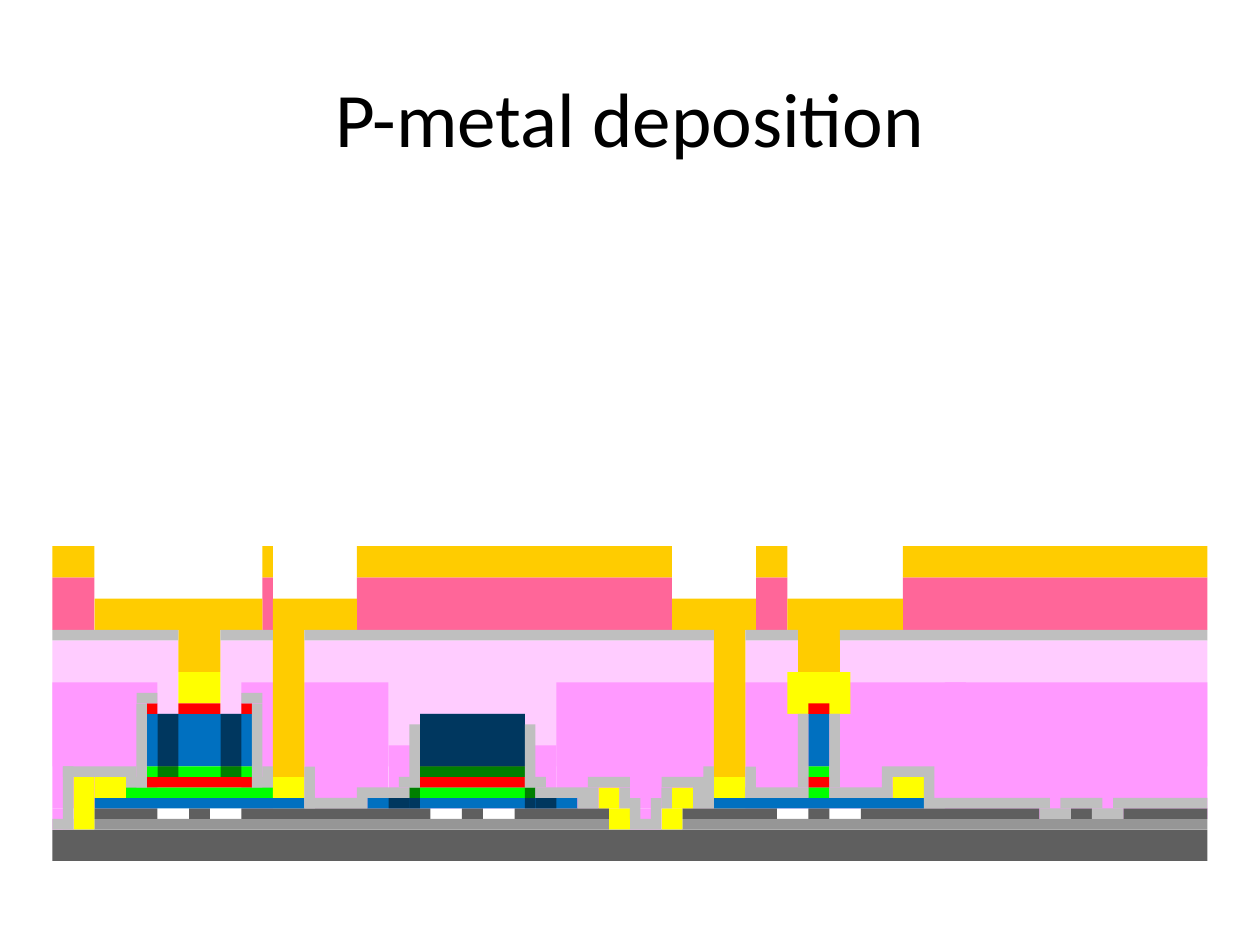
from lxml import etree
from pptx import Presentation
from pptx.dml.color import RGBColor
from pptx.enum.shapes import MSO_SHAPE
from pptx.enum.text import MSO_ANCHOR, PP_ALIGN
from pptx.oxml.ns import qn
from pptx.util import Inches, Pt

RECTANGLE = MSO_SHAPE.RECTANGLE
CENTER = PP_ALIGN.CENTER
MIDDLE = MSO_ANCHOR.MIDDLE

CELL = Inches(1) / 12
LEFT_CELLS, TOP_CELLS = 5, 52

SILICON, OXIDE = "5F5F5F", "969696"
N_LAYER, QUANTUM_WELL, CLADDING = "0070C0", "00FF00", "FF0000"
CONTACT, P_METAL = "FFFF00", "FFCC00"
LOWER_FILL, UPPER_FILL, RESIST = "FF99FF", "FFCCFF", "FF6699"
PASSIVATION, IMPLANT = "BFBFBF", "000000"

RESIST_SPANS = [(0, 4), (20, 1), (29, 30), (67, 3), (81, 29)]
FILL_SPANS = [(0, 12), (16, 5), (24, 39), (66, 5), (75, 35)]
MESA_SPANS = [(9, 10), (35, 10), (72, 2)]

# Each layer: colour, top row, rows high, [(first column, columns wide)]
LAYERS = [
    (UPPER_FILL, 9, 12, FILL_SPANS),
    (LOWER_FILL, 13, 12, [(0, 10), (18, 3), (24, 8), (48, 15), (66, 21)]),
    (LOWER_FILL, 13, 13, [(85, 25)]),
    (LOWER_FILL, 19, 6, [(32, 16)]),
    (CONTACT, 12, 4, [(70, 6)]),
    (LOWER_FILL, 16, 8, [(69, 9)]),
    (OXIDE, 26, 1, [(4, 49), (60, 50)]),
    (SILICON, 27, 3, [(0, 110)]),
    (SILICON, 25, 1, [(4, 6), (13, 2), (18, 18), (39, 2), (44, 9),
                      (60, 9), (72, 2), (77, 17), (97, 2), (102, 8)]),
    (N_LAYER, 16, 5, MESA_SPANS),
    (N_LAYER, 24, 1, [(4, 20), (30, 20), (63, 20)]),
    (QUANTUM_WELL, 23, 1, [(7, 14), (34, 12), (72, 2)]),
    (CLADDING, 22, 1, MESA_SPANS),
    (QUANTUM_WELL, 21, 1, MESA_SPANS),
    (CONTACT, 22, 2, [(4, 3), (21, 3), (63, 3), (80, 3)]),
    (CONTACT, 23, 2, [(52, 2), (59, 2)]),
    (CONTACT, 25, 2, [(53, 2), (58, 2)]),
    (CONTACT, 22, 5, [(2, 2)]),
    (CONTACT, 12, 3, [(12, 4)]),
    (LOWER_FILL, 25, 2, [(0, 2), (55, 3)]),
    (CLADDING, 15, 1, [(9, 1), (12, 4), (18, 1), (72, 2)]),
]

IMPLANTS = [
    (IMPLANT, 16, 6, [(10, 2), (16, 2), (35, 10)]),
    (IMPLANT, 23, 2, [(34, 1), (45, 1)]),
    (IMPLANT, 24, 1, [(32, 2), (46, 2)]),
]

METALLIZATION = [
    (RESIST, 3, 5, RESIST_SPANS),
    (P_METAL, 5, 3, [(4, 16), (21, 8), (59, 8), (70, 11)]),
    (P_METAL, 8, 14, [(21, 3), (63, 3)]),
    (P_METAL, 0, 3, RESIST_SPANS),
    (P_METAL, 8, 4, [(12, 4), (71, 4)]),
    (PASSIVATION, 8, 1, FILL_SPANS),
]

SIDEWALLS = [
    (PASSIVATION, 14, 1, [(8, 2), (18, 2)]),
    (PASSIVATION, 15, 8, [(8, 1), (19, 1)]),
    (PASSIVATION, 16, 7, [(71, 1), (74, 1)]),
    (PASSIVATION, 17, 6, [(34, 1), (45, 1)]),
    (PASSIVATION, 21, 1, [(1, 7), (20, 1), (62, 1), (79, 5)]),
    (PASSIVATION, 21, 3, [(66, 1)]),
    (PASSIVATION, 21, 4, [(24, 1)]),
    (PASSIVATION, 21, 6, [(1, 1)]),
    (PASSIVATION, 22, 1, [(7, 2), (19, 2), (33, 2), (45, 2), (51, 4), (58, 3)]),
    (PASSIVATION, 22, 2, [(79, 1), (83, 1)]),
    (PASSIVATION, 22, 3, [(61, 2)]),
    (PASSIVATION, 23, 1, [(29, 5), (46, 6), (66, 6), (74, 6)]),
    (PASSIVATION, 23, 2, [(54, 1), (58, 1)]),
    (PASSIVATION, 24, 1, [(24, 6), (50, 2), (83, 12), (96, 4), (101, 9)]),
    (PASSIVATION, 24, 2, [(55, 1), (57, 1)]),
    (PASSIVATION, 25, 1, [(94, 3), (99, 3)]),
    (PASSIVATION, 26, 1, [(0, 2), (55, 3)]),
]


def paint(fill, colour, opacity):
    fill.solid()
    fill.fore_color.rgb = RGBColor.from_string(colour)
    if opacity < 100:
        tint = fill._xPr.find(qn("a:solidFill"))[0]
        etree.SubElement(tint, qn("a:alpha")).set("val", str(opacity * 1000))


def add_block(shapes, colour, column, row, columns, rows, opacity):
    block = shapes.add_shape(
        RECTANGLE,
        round((LEFT_CELLS + column) * CELL), round((TOP_CELLS + row) * CELL),
        round(columns * CELL), round(rows * CELL))
    paint(block.fill, colour, opacity)
    block.line.fill.background()
    block.shadow.inherit = False


def add_layers(shapes, layers, opacity=100):
    for colour, row, rows, spans in layers:
        for column, columns in spans:
            add_block(shapes, colour, column, row, columns, rows, opacity)


def set_title(slide, wording):
    title = slide.shapes.title
    title.left, title.top = Inches(0.5), Inches(0.3)
    title.width, title.height = Inches(9), Inches(1.25)
    title.text_frame.text = wording
    title.text_frame.vertical_anchor = MIDDLE
    heading = title.text_frame.paragraphs[0]
    heading.alignment = CENTER
    font = heading.runs[0].font
    font.name, font.size = "Calibri", Pt(44)
    font.color.rgb = RGBColor.from_string("000000")


def main():
    deck = Presentation()
    deck.slide_width, deck.slide_height = Inches(10), Inches(7.5)
    slide = deck.slides.add_slide(deck.slide_layouts[5])
    set_title(slide, "P-metal deposition")
    add_layers(slide.shapes, LAYERS)
    add_layers(slide.shapes, IMPLANTS, opacity=50)
    add_layers(slide.shapes, METALLIZATION)
    add_layers(slide.shapes.add_group_shape().shapes, SIDEWALLS)
    deck.save("out.pptx")


if __name__ == "__main__":
    main()
